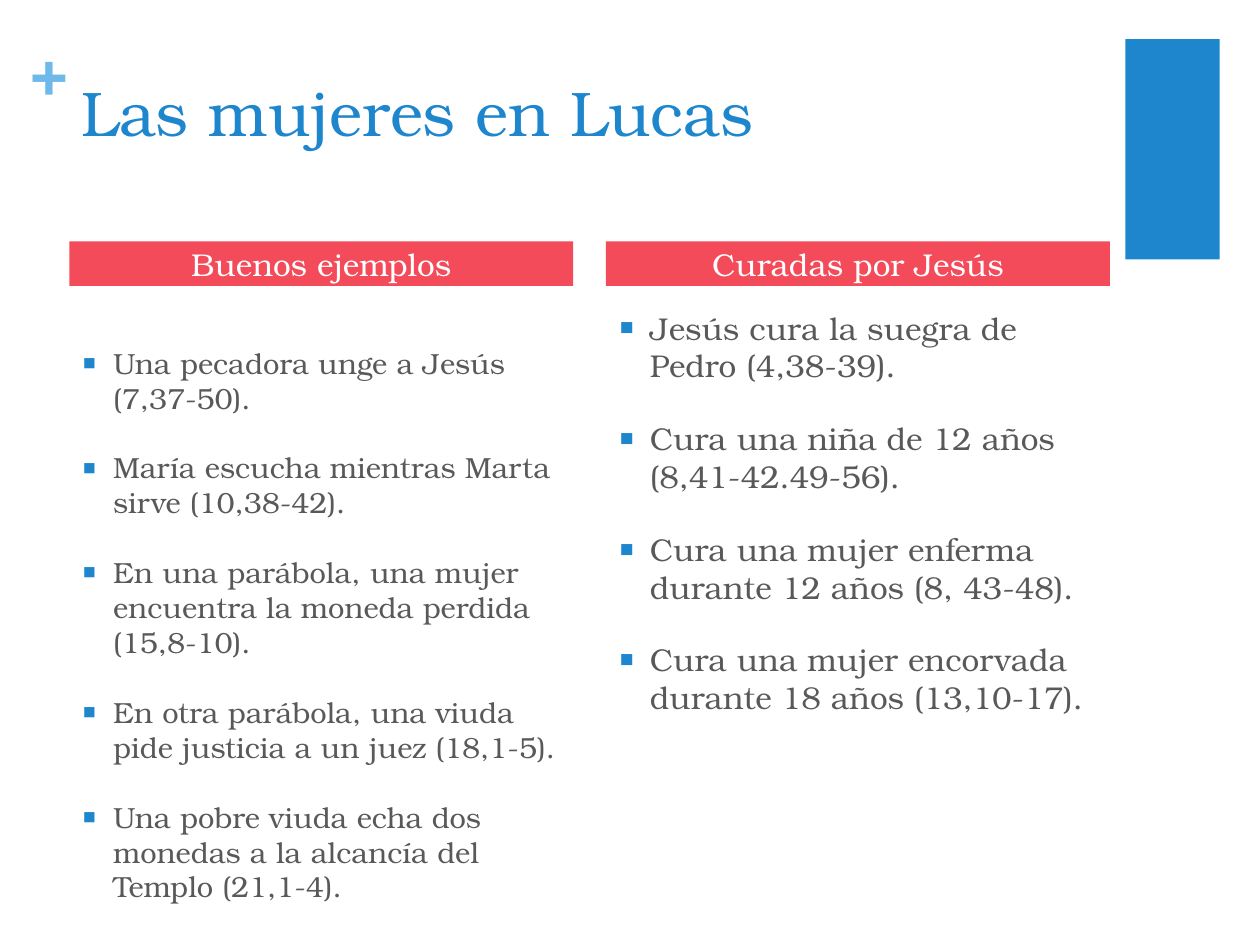
from pptx import Presentation
from pptx.dml.color import RGBColor
from pptx.enum.shapes import MSO_SHAPE
from pptx.enum.text import MSO_ANCHOR, PP_ALIGN
from pptx.oxml.ns import qn
from pptx.util import Pt
from lxml.etree import SubElement

COLORS = {
    "blue": "1D86CD",
    "light_blue": "6EB8EA",
    "red": "F44B5B",
    "gray": "595959",
    "white": "FFFFFF",
}
COLUMN_WIDTH = 288
BODY_BOTTOM = 482.8
COLUMNS = [
    {
        "left": 39.6,
        "heading": "Buenos ejemplos",
        "body_top": 193.7,
        "size": 16.6,
        "items": [
            "Una pecadora unge a Jesús (7,37-50).",
            "María escucha mientras Marta sirve (10,38-42).",
            "En una parábola, una mujer encuentra la moneda perdida (15,8-10).",
            "En otra parábola, una viuda pide justicia a un juez (18,1-5).",
            "Una pobre viuda echa dos monedas a la alcancía del Templo (21,1-4).",
        ],
    },
    {
        "left": 346.3,
        "heading": "Curadas por Jesús",
        "body_top": 172.8,
        "size": 18,
        "items": [
            "Jesús cura la suegra de Pedro (4,38-39).",
            "Cura una niña de 12 años (8,41-42.49-56).",
            "Cura una mujer enferma durante 12 años (8, 43-48).",
            "Cura una mujer encorvada durante 18 años (13,10-17).",
        ],
    },
]


class SlideBuilder:
    font_name = "TeX Gyre Bonum"
    bullet_indent = 18
    paragraph_gap = 20

    def __init__(self, page):
        self.page = page

    def color(self, name):
        return RGBColor.from_string(COLORS[name])

    def style(self, para, size, color, bold=False):
        for span in para.runs:
            span.font.name = self.font_name
            span.font.size = Pt(size)
            span.font.bold = bold
            span.font.color.rgb = self.color(color)

    def block(self, left, top, width, height, fill):
        shape = self.page.shapes.add_shape(
            MSO_SHAPE.RECTANGLE, Pt(left), Pt(top), Pt(width), Pt(height))
        shape.shadow.inherit = False
        shape.fill.solid()
        shape.fill.fore_color.rgb = self.color(fill)
        shape.line.fill.background()
        return shape

    def heading(self, left, top, width, height, text):
        frame = self.block(left, top, width, height, "red").text_frame
        frame.margin_top = frame.margin_bottom = 0
        frame.vertical_anchor = MSO_ANCHOR.MIDDLE
        frame.text = text
        frame.paragraphs[0].alignment = PP_ALIGN.CENTER
        self.style(frame.paragraphs[0], 18, "white")

    def text(self, left, top, width, height, text, size, color, bold=False):
        box = self.page.shapes.add_textbox(Pt(left), Pt(top), Pt(width), Pt(height))
        frame = box.text_frame
        frame.word_wrap = True
        frame.text = text
        for para in frame.paragraphs:
            self.style(para, size, color, bold)
        return frame

    def symbol(self, left, top, width, height, text, size, color):
        frame = self.text(left, top, width, height, text, size, color, bold=True)
        frame.margin_left = frame.margin_right = 0
        frame.margin_top = frame.margin_bottom = 0
        frame.word_wrap = False

    def bullets(self, left, top, width, height, items, size):
        frame = self.text(left, top, width, height, "\n".join(items), size, "gray")
        for index, para in enumerate(frame.paragraphs):
            para.space_before = Pt(self.paragraph_gap if index else 0)
            properties = para._p.get_or_add_pPr()
            properties.set("marL", str(Pt(self.bullet_indent)))
            properties.set("indent", str(-Pt(self.bullet_indent)))
            bullet_color = SubElement(properties, qn("a:buClr"))
            SubElement(bullet_color, qn("a:srgbClr"), val=COLORS["blue"])
            SubElement(properties, qn("a:buSzPct"), val="75000")
            SubElement(properties, qn("a:buFont"), typeface=self.font_name)
            SubElement(properties, qn("a:buChar"), char="■")


def main():
    deck = Presentation()
    deck.slide_width, deck.slide_height = Pt(720), Pt(540)
    builder = SlideBuilder(deck.slides.add_slide(deck.slide_layouts[6]))

    builder.block(643, 22.3, 54, 126, "blue")
    builder.symbol(17.3, 18, 20.9, 43.9, "+", 36, "light_blue")
    builder.text(39.6, 38.2, 594.7, 87.8, "Las mujeres en Lucas", 36, "blue")
    for column in COLUMNS:
        left, top = column["left"], column["body_top"]
        builder.heading(left, 138, COLUMN_WIDTH, 25.4, column["heading"])
        builder.bullets(left, top, COLUMN_WIDTH, BODY_BOTTOM - top,
                        column["items"], column["size"])

    deck.save("out.pptx")


if __name__ == "__main__":
    main()
